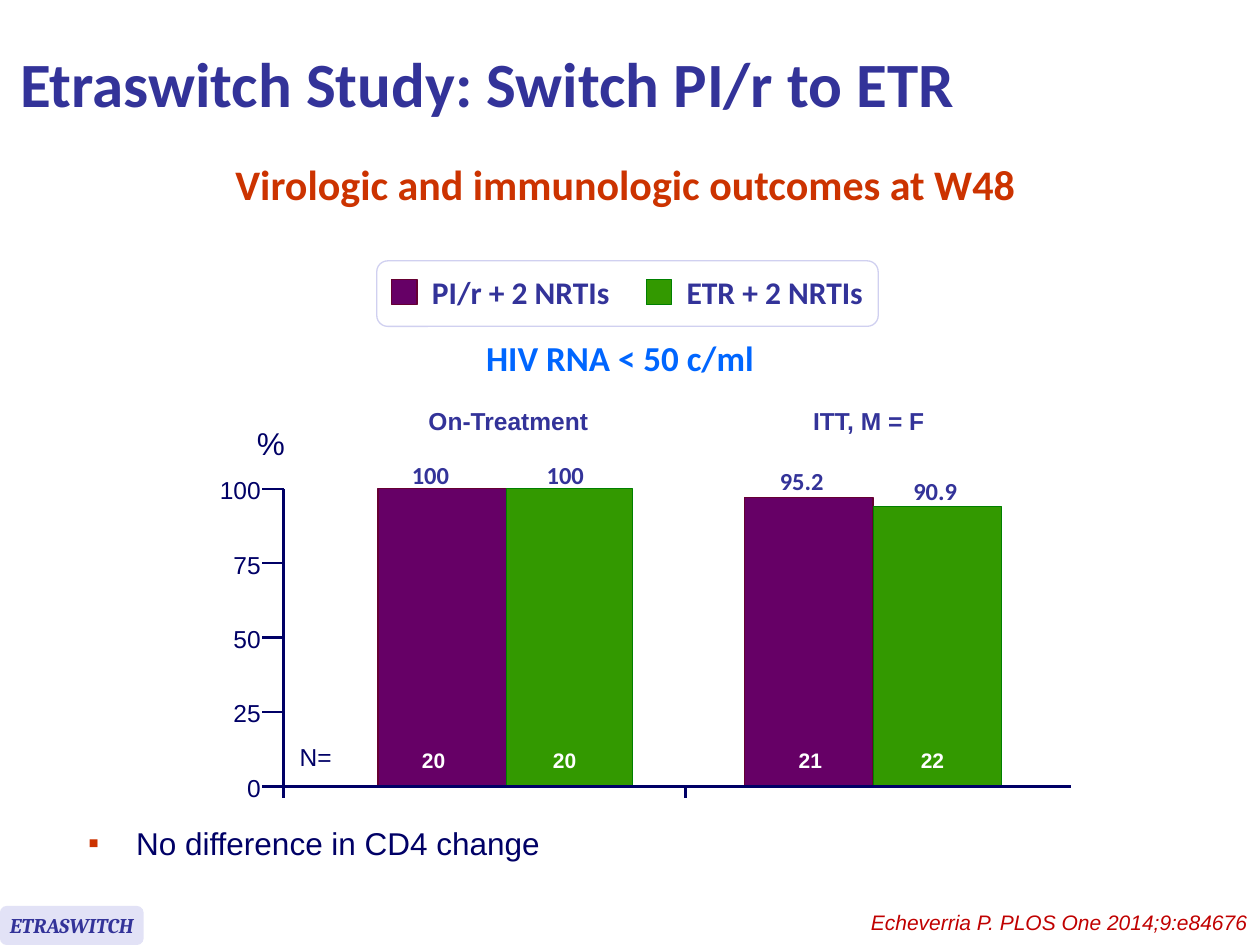
from lxml.etree import SubElement
from pptx import Presentation
from pptx.dml.color import RGBColor
from pptx.enum.shapes import MSO_CONNECTOR, MSO_SHAPE
from pptx.enum.text import MSO_ANCHOR, MSO_AUTO_SIZE, PP_ALIGN
from pptx.oxml.ns import qn
from pptx.util import Inches, Pt

NAVY, INDIGO, RED = "000066", "333399", "CC3300"
ARMS = [("PI/r + 2 NRTIs", "660066", "660033"),
        ("ETR + 2 NRTIs", "339900", "008000")]
LEFT, MID, RIGHT = PP_ALIGN.LEFT, PP_ALIGN.CENTER, PP_ALIGN.RIGHT


def color(code):
    return RGBColor.from_string(code)


def place(shape, box):
    shape.left, shape.top, shape.width, shape.height = map(Inches, box)


def write(frame, text, size, face, code, bold=False, italic=False, align=LEFT):
    """Add one styled run to the first paragraph and return the paragraph."""
    para = frame.paragraphs[0]
    para.alignment = align
    run = para.add_run()
    run.text = text
    font = run.font
    font.size, font.name = Pt(size), face
    font.bold, font.italic = bold, italic
    font.color.rgb = color(code)
    return para


def label(shapes, box, *style, pad=(0.1, 0.05), wrap=False,
          anchor=MSO_ANCHOR.TOP, **more):
    frame = shapes.add_textbox(*map(Inches, box)).text_frame
    frame.word_wrap = wrap
    frame.auto_size = MSO_AUTO_SIZE.SHAPE_TO_FIT_TEXT
    frame.vertical_anchor = anchor
    frame.margin_left = frame.margin_right = Inches(pad[0])
    frame.margin_top = frame.margin_bottom = Inches(pad[1])
    return write(frame, *style, **more)


def block(shapes, kind, box, fill, edge=None):
    shape = shapes.add_shape(kind, *map(Inches, box))
    shape.shadow.inherit = False
    shape.fill.solid()
    shape.fill.fore_color.rgb = color(fill)
    if edge:
        shape.line.color.rgb = color(edge)
        shape.line.width = Pt(0.75)
    else:
        shape.line.fill.background()
    return shape


def rule(shapes, *ends):
    line = shapes.add_connector(MSO_CONNECTOR.STRAIGHT, *map(Inches, ends))
    line.line.color.rgb = color(NAVY)
    line.line.width = Pt(1.5)
    SubElement(line._element.spPr, qn("a:effectLst"))


def heading(slide, box):
    title = slide.shapes.title
    place(title, box)
    frame = title.text_frame
    frame.vertical_anchor = MSO_ANCHOR.MIDDLE
    frame.auto_size = MSO_AUTO_SIZE.NONE
    write(frame, "Etraswitch Study: Switch PI/r to ETR", 36, "Calibri",
          INDIGO, bold=True)


def legend(slide, box):
    x, y, wide, high = box
    shapes = slide.shapes.add_group_shape().shapes
    block(shapes, MSO_SHAPE.ROUNDED_RECTANGLE, box, "FFFFFF", "D0D0F0")
    for i, (name, fill, edge) in enumerate(ARMS):
        left = x + 0.12 + 2.02 * i
        block(shapes, MSO_SHAPE.RECTANGLE, (left, y + 0.15, 0.2, 0.2),
              fill, edge)
        label(shapes, (left + 0.22, y + 0.05, 1.65, 0.4), name, 18,
              "Calibri", INDIGO, bold=True)


def axes(shapes, box):
    x, y, wide, high = box
    base, step = y + high, high / 4
    rule(shapes, x, y, x, base + 0.09)
    rule(shapes, x - 0.17, base, x + wide, base)
    rule(shapes, x + 3.19, base, x + 3.19, base + 0.09)
    for i in range(5):
        level = base - step * i
        if i:
            rule(shapes, x - 0.17, level, x, level)
        label(shapes, (x - 0.51, level - 0.11, 0.33, 0.24), str(25 * i), 14,
              "Arial", NAVY, align=RIGHT, pad=(0, 0),
              anchor=MSO_ANCHOR.MIDDLE)
    label(shapes, (x - 0.31, y - 0.56, 0.61, 0.43), "%", 18, "Arial", NAVY)
    label(shapes, (x + 0.03, base - 0.4, 0.46, 0.34), "N=", 14, "Arial", NAVY)


def bars(shapes, box):
    """Draw both analyses; offsets are measured from the plot's left edge."""
    x, y, wide, high = box
    base = y + high
    # name, its left and width, then per bar:
    # left, width, height, value, value left, top and width, count, count left
    sets = [
        ("On-Treatment", 1.05, 1.47,
         [(0.75, 1.02, 2.36, "100", 0.92, -0.33, 0.5, "20", 1.0),
          (1.77, 1.0, 2.36, "100", 1.99, -0.33, 0.5, "20", 2.04)]),
        ("ITT, M = F", 4.1, 1.09,
         [(3.66, 1.02, 2.29, "95.2", 3.84, -0.28, 0.55, "21", 3.99),
          (4.68, 1.02, 2.22, "90.9", 4.9, -0.2, 0.55, "22", 4.96)]),
    ]
    for name, left, span, pair in sets:
        label(shapes, (x + left, y - 0.71, span, 0.34), name, 14, "Arial",
              INDIGO, bold=True, align=MID)
        for (_, fill, edge), bar in zip(ARMS, pair):
            start, width, tall, value, vx, vy, room, count, cx = bar
            block(shapes, MSO_SHAPE.RECTANGLE,
                  (x + start, base - tall, width, tall), fill, edge)
            label(shapes, (x + vx, y + vy, room, 0.44), value,
                  14, "Calibri", INDIGO, bold=True, pad=(0.1, 0.1))
            label(shapes, (x + cx, base - 0.36, 0.39, 0.3), count, 12,
                  "Arial", "FFFFFF", bold=True)


def plot(slide, box):
    shapes = slide.shapes.add_group_shape().shapes
    bars(shapes, box)
    axes(shapes, box)


def finding(slide, box):
    body = slide.placeholders[1]
    place(body, box)
    frame = body.text_frame
    frame.auto_size = MSO_AUTO_SIZE.NONE
    props = frame.paragraphs[0]._p.get_or_add_pPr()
    props.set("marL", str(Inches(0.38)))
    props.set("indent", str(-Inches(0.38)))
    tint = SubElement(props, qn("a:buClr"))
    SubElement(tint, qn("a:srgbClr")).set("val", RED)
    SubElement(props, qn("a:buFont")).set("typeface", "Arial")
    SubElement(props, qn("a:buChar")).set("char", "▪")
    para = write(frame, "No difference in CD4 change", 18, "Arial", NAVY)
    para.line_spacing = 0.9
    para.space_before = Pt(0)


def footer(slide, box):
    x, y, wide, high = box
    tag = block(slide.shapes, MSO_SHAPE.ROUNDED_RECTANGLE,
                (x, y + 0.02, 1.14, 0.31), "E2E2F6")
    tag.text_frame.word_wrap = False
    tag.text_frame.vertical_anchor = MSO_ANCHOR.MIDDLE
    write(tag.text_frame, "ETRASWITCH", 12, "Cambria", INDIGO, bold=True,
          italic=True, align=MID)
    label(slide.shapes, (x + wide - 5.92, y, 5.92, 0.3),
          "Echeverria P. PLOS One 2014;9:e84676", 12, "Arial", "C00000",
          italic=True, align=RIGHT, wrap=True)


def main():
    deck = Presentation()
    deck.slide_width, deck.slide_height = Inches(10), Inches(7.5)
    slide = deck.slides.add_slide(deck.slide_layouts[1])
    heading(slide, (0.06, 0.05, 8.96, 1.21))
    label(slide.shapes, (1.77, 1.21, 6.44, 0.5),
          "Virologic and immunologic outcomes at W48", 24, "Calibri", RED,
          bold=True)
    legend(slide, (2.99, 2.07, 3.98, 0.52))
    plot(slide, (2.25, 3.88, 6.25, 2.36))
    finding(slide, (0.6, 6.52, 4.55, 0.65))
    para = label(slide.shapes, (3.76, 2.71, 2.47, 0.35), "HIV RNA < 50 c/ml",
                 20, "Calibri", "0066FF", bold=True, wrap=True)
    para.line_spacing = 0.7
    footer(slide, (0, 7.17, 10, 0.33))
    deck.save("out.pptx")


if __name__ == "__main__":
    main()
